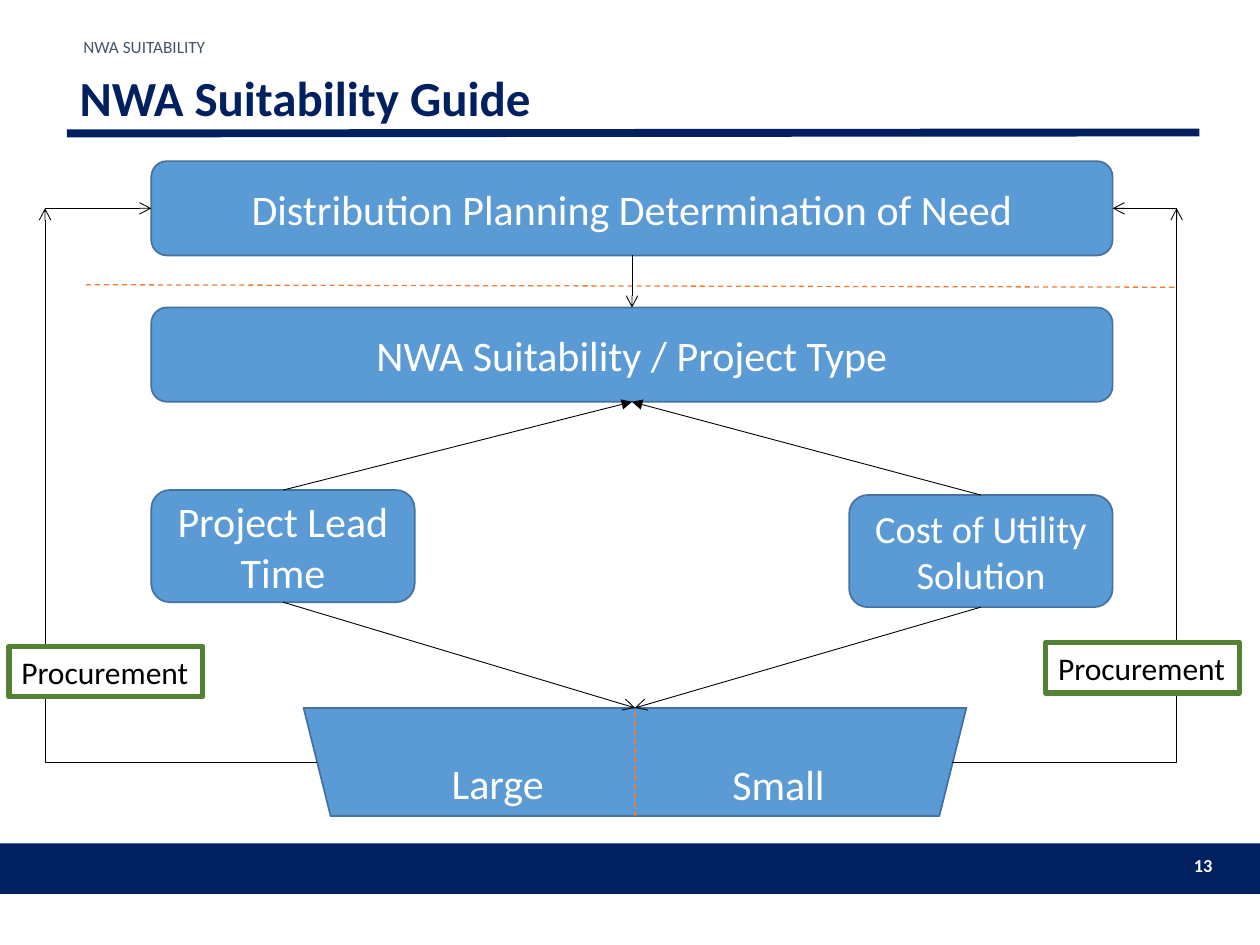
"""Build the NWA Suitability Guide flow slide."""
from lxml.etree import SubElement
from pptx import Presentation
from pptx.dml.color import RGBColor
from pptx.enum.dml import MSO_LINE
from pptx.enum.shapes import MSO_CONNECTOR, MSO_SHAPE
from pptx.enum.text import MSO_ANCHOR, MSO_AUTO_SIZE, PP_ALIGN
from pptx.oxml.ns import qn
from pptx.util import Cm, Pt

NAVY = RGBColor(0x00, 0x20, 0x60)
SLATE = RGBColor(0x44, 0x54, 0x6A)
BLUE = RGBColor(0x5B, 0x9B, 0xD5)
EDGE = RGBColor(0x43, 0x73, 0x9E)
ORANGE = RGBColor(0xED, 0x7D, 0x31)
GREEN = RGBColor(0x54, 0x82, 0x35)
BLACK = RGBColor(0, 0, 0)
WHITE = RGBColor(0xFF, 0xFF, 0xFF)

TITLE = "NWA Suitability Guide"
SECTION = "NWA SUITABILITY"
PAGE = "13"
STEPS = {
    "need": ("Distribution Planning Determination of Need", 24, (3.05, 3.25, 19.38, 1.9)),
    "type": ("NWA Suitability / Project Type", 24, (3.05, 6.2, 19.38, 1.9)),
    "lead": ("Project Lead Time", 24, (3.05, 9.88, 5.31, 2.26)),
    "cost": ("Cost of Utility Solution", 22, (17.12, 9.98, 5.31, 2.26)),
}
SIZES = [("Large", (8.84, 15.14, 2.39, 1.27)), ("Small", (14.5, 15.16, 2.39, 1.27))]
PROCUREMENT = [("Procurement", (0.18, 13.03, 3.91, 1.02)),
               ("Procurement", (21.08, 12.95, 3.91, 1.02))]
FUNNEL = (6.12, 14.27, 13.36, 2.18)
FUNNEL_X = 12.8
LOOP_Y, LOOP_START_Y = 4.2, 15.37
LOOPS = [("need", 1, 6.4, 0.91), ("need", 3, 19.2, 23.72)]
TOP, LEFT, BOTTOM, RIGHT = range(4)

prs = Presentation()
prs.slide_width, prs.slide_height = Cm(25.4), Cm(19.05)
s = prs.slides.add_slide(prs.slide_layouts[1])


def write(sp, text, size, color, align=PP_ALIGN.LEFT, bold=False):
    p = sp.text_frame.paragraphs[0]
    p.alignment = align
    r = p.add_run()
    r.text = text
    r.font.name, r.font.size, r.font.bold = "Calibri", Pt(size), bold
    r.font.color.rgb = color
    return p


def place(sp, box):
    sp.left, sp.top, sp.width, sp.height = map(Cm, box)


def shape(kind, box, fill, edge=None, width=1):
    sp = s.shapes.add_shape(kind, *map(Cm, box))
    sp.shadow.inherit = False
    sp.fill.solid()
    sp.fill.fore_color.rgb = fill
    if edge is None:
        sp.line.fill.background()
    else:
        sp.line.color.rgb, sp.line.width = edge, Pt(width)
    return sp


def label(text, box, size, color, align, bold=False):
    sp = s.shapes.add_textbox(*map(Cm, box))
    sp.text_frame.word_wrap = False
    write(sp, text, size, color, align, bold)


def line(start, end, color=BLACK, width=0.5, head=None, dash=False, kind=MSO_CONNECTOR.STRAIGHT):
    c = s.shapes.add_connector(kind, *map(Cm, start + end))
    c.line.color.rgb, c.line.width = color, Pt(width)
    if dash:
        c.line.dash_style = MSO_LINE.DASH
    if head:
        SubElement(c.line._get_or_add_ln(), qn("a:tailEnd"), type=head)
    SubElement(c._element.spPr, qn("a:effectLst"))
    return c


shape(MSO_SHAPE.RECTANGLE, (0, 17, 25.4, 1.02), NAVY)
label(PAGE, (23.65, 17.1, 1.04, 0.74), 10.5, WHITE, PP_ALIGN.RIGHT, True)
line((1.35, 2.69), (24.18, 2.67), NAVY, 4.5)

title, body = s.shapes.title, s.placeholders[1]
place(title, (1.35, 1.32, 22.83, 1.4))
title.text_frame.vertical_anchor = MSO_ANCHOR.MIDDLE
write(title, TITLE, 28, NAVY, bold=True).line_spacing = 0.9
place(body, (1.35, 0.71, 22.83, 0.56))
body.text_frame.margin_left = Cm(0.33)
p = write(body, SECTION, 9.8, SLATE)
p.line_spacing, p.space_before = 0.7, Pt(0)
pPr = p._p.get_or_add_pPr()
pPr.set("marL", "0")
pPr.set("indent", "0")
SubElement(pPr, qn("a:buNone"))
for sp in (title, body):
    sp.text_frame.auto_size = MSO_AUTO_SIZE.NONE

steps = {}
for key, (text, size, box) in STEPS.items():
    steps[key] = sp = shape(MSO_SHAPE.ROUNDED_RECTANGLE, box, BLUE, EDGE)
    sp.text_frame.word_wrap = True
    sp.text_frame.vertical_anchor = MSO_ANCHOR.MIDDLE
    write(sp, text, size, WHITE, PP_ALIGN.CENTER)

funnel = shape(MSO_SHAPE.TRAPEZOID, FUNNEL, BLUE, EDGE)
funnel.rotation = 180
for text, box in SIZES:
    label(text, box, 24, WHITE, PP_ALIGN.CENTER)

line((1.73, 5.74), (23.72, 5.79), ORANGE, 0.75, dash=True)
line((FUNNEL_X, FUNNEL[1] + FUNNEL[3]), (FUNNEL_X, FUNNEL[1]), ORANGE, 0.75, dash=True)

for start, side, end, head in [("need", BOTTOM, "type", "arrow"),
                               ("lead", TOP, "type", "triangle"),
                               ("cost", TOP, "type", "triangle")]:
    c = line((0, 0), (1, 1), head=head)
    c.begin_connect(steps[start], side)
    c.end_connect(steps[end], BOTTOM if side == TOP else TOP)

for start in ("lead", "cost"):
    c = line((0, 0), (FUNNEL_X, FUNNEL[1]), head="arrow")
    c.begin_connect(steps[start], BOTTOM)

for end, side, start_x, loop_x in LOOPS:
    c = line((start_x, LOOP_START_Y), (loop_x, LOOP_Y), head="arrow", kind=MSO_CONNECTOR.ELBOW)
    c._element.spPr.find(qn("a:prstGeom")).set("prst", "bentConnector2")
    c = line((loop_x, LOOP_Y), (loop_x, LOOP_Y), head="arrow")
    c.end_connect(steps[end], side)

for text, box in PROCUREMENT:
    sp = shape(MSO_SHAPE.RECTANGLE, box, WHITE, GREEN, 3)
    sp.text_frame.word_wrap = False
    write(sp, text, 18, BLACK)

prs.save("out.pptx")
